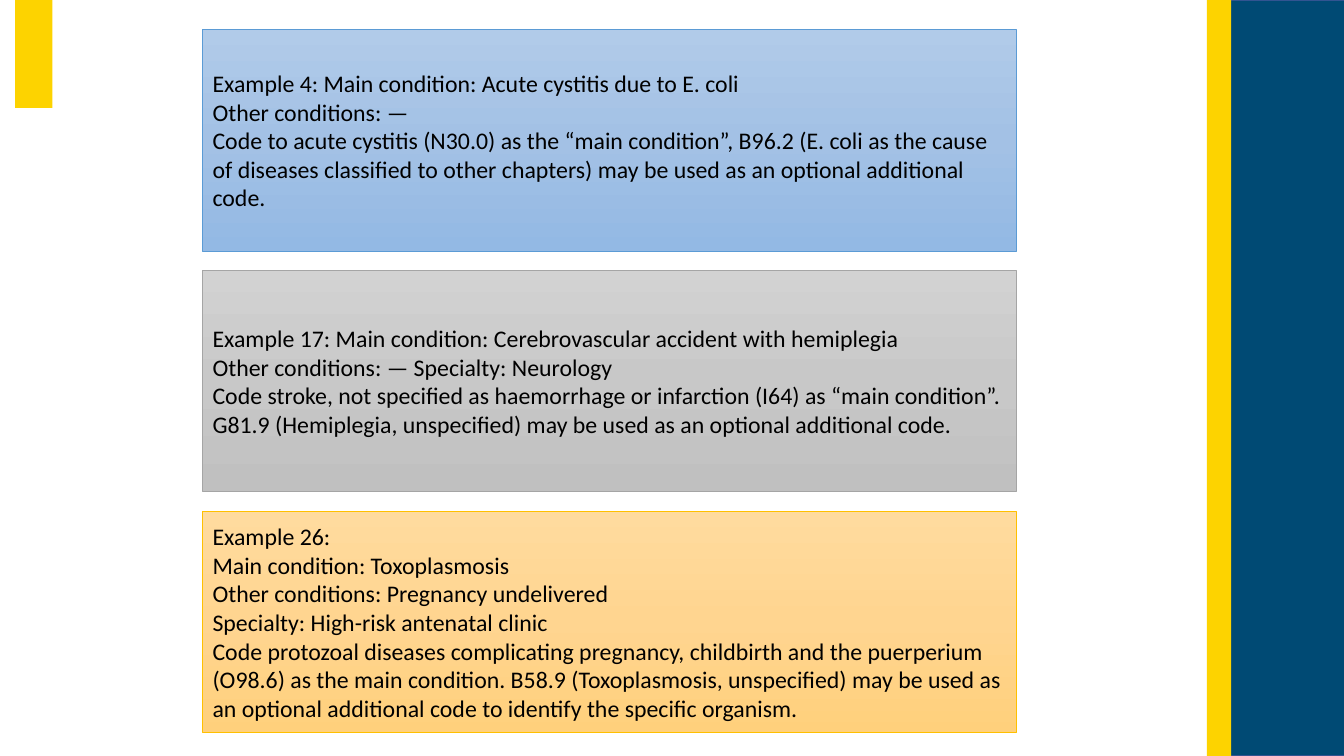
import copy

import pptx
import pptx.dml.color
import pptx.enum.shapes
import pptx.enum.text
import pptx.util

EMU_PER_PX = 9144  # 100 px to the inch
FONT_NAME = "Calibri"
FONT_SIZE = 17

COLOURS = {
    "yellow": "FDD300",
    "navy": "004A74",
    "navy_line": "325491",
    "text": "000000",
    "blue_line": "5B9BD5",
    "grey_line": "A5A5A5",
    "gold_line": "FFC000",
    "blue_top": "B1CBE9",
    "blue_middle": "A3C1E5",
    "blue_bottom": "93B9E4",
    "grey_top": "D2D2D2",
    "grey_middle": "C8C8C8",
    "grey_bottom": "C0C0C0",
    "gold_top": "FFDB9E",
    "gold_middle": "FFD590",
    "gold_bottom": "FFD07C",
}

CARD_LEFT, CARD_TOP = 201, 29
CARD_WIDTH, CARD_HEIGHT = 807, 220
CARD_PITCH = 239

EXAMPLES = [
    ("blue", [
        "Example 4: Main condition: Acute cystitis due to E. coli",
        "Other conditions: —",
        "Code to acute cystitis (N30.0) as the “main condition”, B96.2 (E. coli as the cause "
        "of diseases classified to other chapters) may be used as an optional additional code.",
    ]),
    ("grey", [
        "Example 17: Main condition: Cerebrovascular accident with hemiplegia",
        "Other conditions: — Specialty: Neurology",
        "Code stroke, not specified as haemorrhage or infarction (I64) as “main condition”. "
        "G81.9 (Hemiplegia, unspecified) may be used as an optional additional code.",
    ]),
    ("gold", [
        "Example 26:",
        "Main condition: Toxoplasmosis",
        "Other conditions: Pregnancy undelivered",
        "Specialty: High-risk antenatal clinic",
        "Code protozoal diseases complicating pregnancy, childbirth and the puerperium "
        "(O98.6) as the main condition. B58.9 (Toxoplasmosis, unspecified) may be used as "
        "an optional additional code to identify the specific organism.",
    ]),
]


def px(length):
    return pptx.util.Emu(length * EMU_PER_PX)


def colour(name):
    return pptx.dml.color.RGBColor.from_string(COLOURS[name])


def add_rectangle(slide, left, top, width, height):
    shape = slide.shapes.add_shape(
        pptx.enum.shapes.MSO_SHAPE.RECTANGLE, px(left), px(top), px(width), px(height))
    shape.shadow.inherit = False
    return shape


def set_line(shape, name, points):
    shape.line.color.rgb = colour(name)
    shape.line.width = pptx.util.Pt(points)


def add_bar(slide, left, top, width, height, fill, line=None):
    bar = add_rectangle(slide, left, top, width, height)
    bar.fill.solid()
    bar.fill.fore_color.rgb = colour(fill)
    if line:
        set_line(bar, line, 1)
    else:
        bar.line.fill.background()


def fill_downwards(shape, names):
    """Fill with a top-to-bottom gradient of three evenly spaced colours."""
    shape.fill.gradient()
    shape.fill.gradient_angle = 270
    stop_list = shape._element.xpath("p:spPr/a:gradFill/a:gsLst")[0]
    stop_list.insert(1, copy.deepcopy(stop_list[0]))
    for index, (stop, name) in enumerate(zip(shape.fill.gradient_stops, names)):
        stop.position = index / 2
        stop.color.rgb = colour(name)


def add_example_card(slide, top, theme, lines):
    card = add_rectangle(slide, CARD_LEFT, top, CARD_WIDTH, CARD_HEIGHT)
    fill_downwards(card, [f"{theme}_{part}" for part in ("top", "middle", "bottom")])
    set_line(card, f"{theme}_line", 0.5)
    frame = card.text_frame
    frame.word_wrap = True
    frame.vertical_anchor = pptx.enum.text.MSO_ANCHOR.MIDDLE
    frame.text = "\n".join(lines)
    for paragraph in frame.paragraphs:
        paragraph.alignment = pptx.enum.text.PP_ALIGN.LEFT
        paragraph.font.name = FONT_NAME
        paragraph.font.size = pptx.util.Pt(FONT_SIZE)
        paragraph.font.color.rgb = colour("text")


def main():
    presentation = pptx.Presentation()
    presentation.slide_width = px(1333)
    presentation.slide_height = px(750)
    blank_layout = presentation.slide_layouts[6]
    slide = presentation.slides.add_slide(blank_layout)

    add_bar(slide, 15, -3, 37, 110, "yellow")
    add_bar(slide, 1218, 0, 121, 750, "navy", "navy_line")
    add_bar(slide, 1197, -1, 24, 753, "yellow")
    for index, (theme, lines) in enumerate(EXAMPLES):
        add_example_card(slide, CARD_TOP + index * CARD_PITCH, theme, lines)

    presentation.save("out.pptx")


if __name__ == "__main__":
    main()
